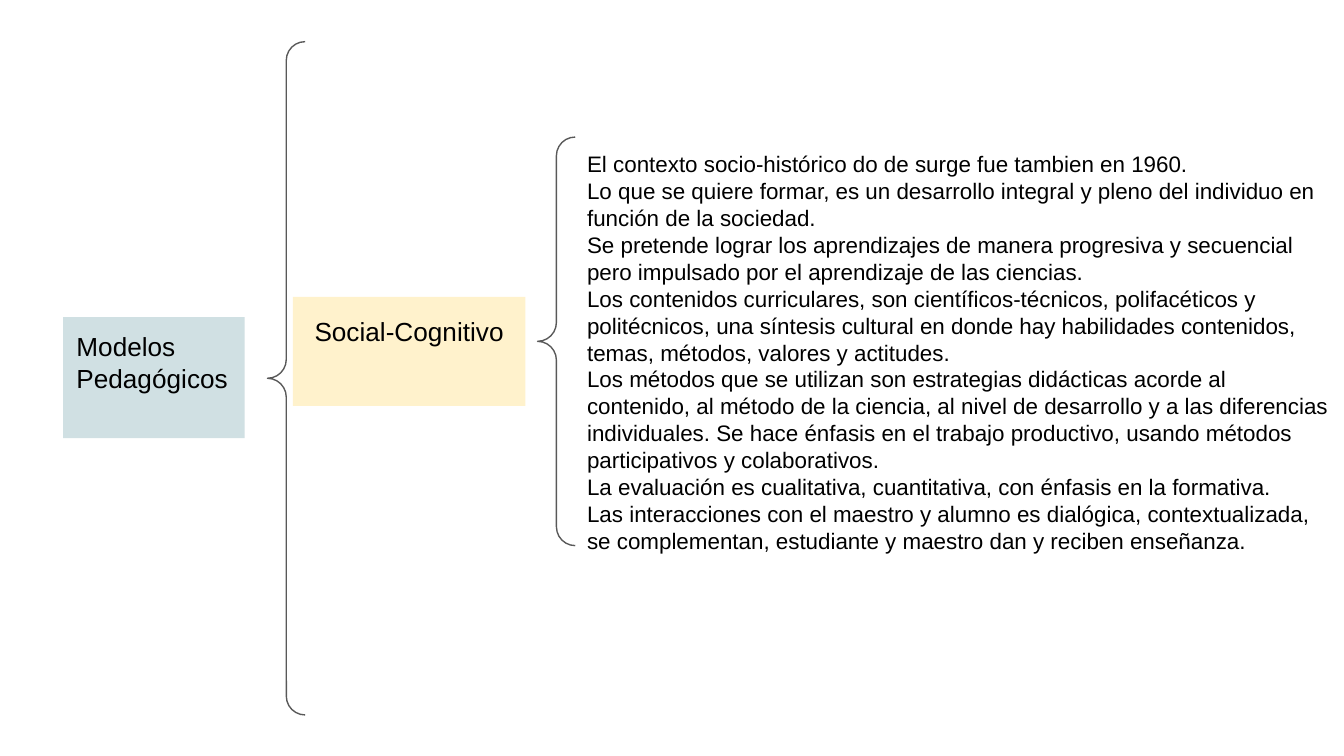
from pptx import Presentation
from pptx.dml.color import RGBColor
from pptx.enum.shapes import MSO_SHAPE
from pptx.enum.text import MSO_ANCHOR, PP_ALIGN
from pptx.util import Inches, Pt

RECTANGLE = MSO_SHAPE.RECTANGLE
LEFT_BRACE = MSO_SHAPE.LEFT_BRACE
TOP = MSO_ANCHOR.TOP
LEFT, CENTER = PP_ALIGN.LEFT, PP_ALIGN.CENTER


def color(hex_string):
    return RGBColor.from_string(hex_string)


def write(box, lines, size, align=LEFT):
    frame = box.text_frame
    frame.word_wrap = True
    frame.vertical_anchor = TOP
    frame.margin_left = frame.margin_right = Inches(0.1)
    frame.margin_top = frame.margin_bottom = Inches(0.1)
    for index, line in enumerate(lines):
        para = frame.add_paragraph() if index else frame.paragraphs[0]
        para.alignment = align
        span = para.add_run()
        span.text = line
        span.font.name = "Arial"
        span.font.size = Pt(size)
        span.font.color.rgb = color("000000")


deck = Presentation()
deck.slide_width, deck.slide_height = Inches(10), Inches(10 * 9 / 16)
page = deck.slides.add_slide(deck.slide_layouts[6])

levels = [
    ("Modelos Pedagógicos", (0.47, 2.36, 1.35, 0.9), "D0E0E3", LEFT,
     (1.99, 0.31, 0.28, 5.01)),
    ("Social-Cognitivo", (2.18, 2.21, 1.73, 0.81), "FFF2CC", CENTER,
     (4, 1.02, 0.28, 3.04)),
]
for text, label_place, fill, align, brace_place in levels:
    label = page.shapes.add_shape(RECTANGLE, *map(Inches, label_place))
    label.shadow.inherit = False
    label.fill.solid()
    label.fill.fore_color.rgb = color(fill)
    label.line.fill.background()
    write(label, [text], 14, align)

    brace = page.shapes.add_shape(LEFT_BRACE, *map(Inches, brace_place))
    brace.adjustments[0] = 0.5
    brace.adjustments[1] = 0.5
    brace.shadow.inherit = False
    brace.fill.background()
    brace.line.color.rgb = color("595959")
    brace.line.width = Pt(0.75)

model_para = label.text_frame.paragraphs[0]
model_para.line_spacing = 1.15
model_para.space_before = model_para.space_after = Pt(12)

features = [
    "El contexto socio-histórico do de surge fue tambien en 1960.",
    "Lo que se quiere formar, es un desarrollo integral y pleno del individuo en "
    "función de la sociedad.",
    "Se pretende lograr los aprendizajes de manera progresiva y secuencial pero "
    "impulsado por el aprendizaje de las ciencias.",
    "Los contenidos curriculares, son científicos-técnicos, polifacéticos y "
    "politécnicos, una síntesis cultural en donde hay habilidades contenidos, "
    "temas, métodos, valores y actitudes.",
    "Los métodos que se utilizan son estrategias didácticas acorde al contenido, "
    "al método de la ciencia, al nivel de desarrollo y a las diferencias "
    "individuales. Se hace énfasis en el trabajo productivo, usando métodos "
    "participativos y colaborativos.",
    "La evaluación es cualitativa, cuantitativa, con énfasis en la formativa.",
    "Las interacciones con el maestro y alumno es dialógica, contextualizada, se "
    "complementan, estudiante y maestro dan y reciben enseñanza.",
]
description = page.shapes.add_textbox(
    Inches(4.27), Inches(1.02), Inches(5.73), Inches(3.2))
write(description, features, 12)

deck.save("out.pptx")
